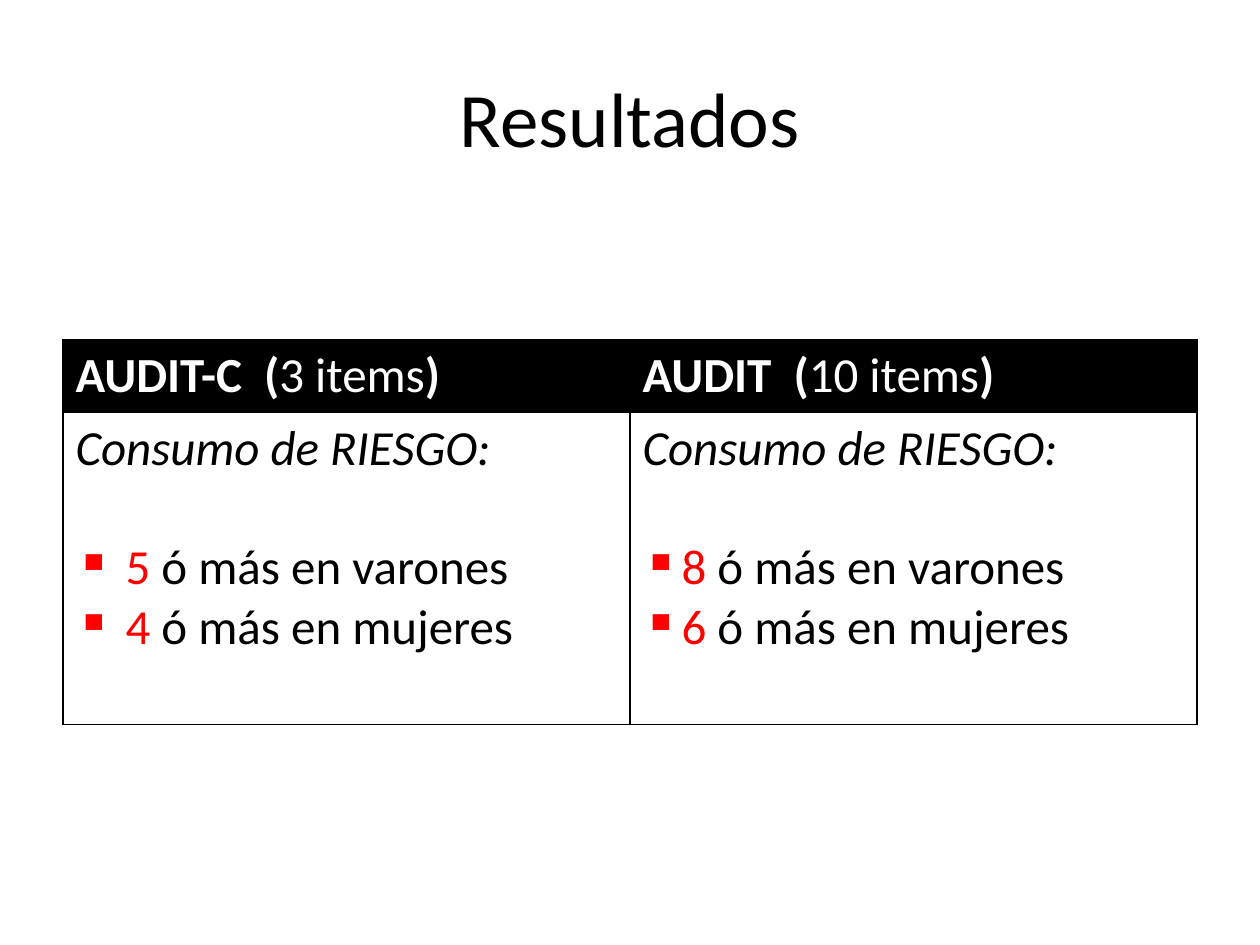
from dataclasses import dataclass

from lxml import etree
from pptx import Presentation
from pptx.dml.color import RGBColor
from pptx.enum.text import MSO_ANCHOR, PP_ALIGN
from pptx.oxml.ns import qn
from pptx.util import Emu, Pt

PX = 914400 / 126
BLACK = RGBColor(0x00, 0x00, 0x00)
WHITE = RGBColor(0xFF, 0xFF, 0xFF)
RED = RGBColor(0xFF, 0x00, 0x00)
FONT = "Calibri"
CENTER = PP_ALIGN.CENTER
MIDDLE = MSO_ANCHOR.MIDDLE
TABLE_TEXT = 28
LINE_GAP = 34
BULLET_INDENT = 39
COLUMN_WIDTH = 567
ROW_HEIGHTS = (72, 312)
BORDER_SIDES = ("lnL", "lnR", "lnT", "lnB")


@dataclass(frozen=True)
class Piece:
    text: str
    color: RGBColor = BLACK
    bold: bool = False
    italic: bool = False


@dataclass(frozen=True)
class Questionnaire:
    name: str
    items: str
    men: str
    women: str


QUESTIONNAIRES = (
    Questionnaire("AUDIT-C", "3 items", " 5", " 4"),
    Questionnaire("AUDIT", "10 items", "8", "6"),
)


def px(length: int) -> Emu:
    return Emu(round(length * PX))


def write_pieces(paragraph, pieces: tuple[Piece, ...], size: int = TABLE_TEXT) -> None:
    for piece in pieces:
        run = paragraph.add_run()
        run.text = piece.text
        run.font.name = FONT
        run.font.size = Pt(size)
        run.font.bold = piece.bold
        run.font.italic = piece.italic
        run.font.color.rgb = piece.color


def add_bullet(paragraph) -> None:
    properties = paragraph._p.get_or_add_pPr()
    properties.set("marL", str(px(BULLET_INDENT)))
    properties.set("indent", str(-px(BULLET_INDENT)))
    etree.SubElement(properties, qn("a:buChar"), char="▪")


def style_cell(cell, fill: RGBColor) -> None:
    properties = cell._tc.get_or_add_tcPr()
    for side in BORDER_SIDES:
        border = etree.SubElement(properties, qn(f"a:{side}"), w=str(Pt(1)))
        line_fill = etree.SubElement(border, qn("a:solidFill"))
        etree.SubElement(line_fill, qn("a:srgbClr"), val=str(BLACK))
    cell.fill.solid()
    cell.fill.fore_color.rgb = fill


def write_header(cell, questionnaire: Questionnaire) -> None:
    style_cell(cell, BLACK)
    write_pieces(cell.text_frame.paragraphs[0], (
        Piece(f"{questionnaire.name}  (", WHITE, bold=True),
        Piece(questionnaire.items, WHITE),
        Piece(")", WHITE, bold=True),
    ))


def write_thresholds(cell, questionnaire: Questionnaire) -> None:
    style_cell(cell, WHITE)
    heading = cell.text_frame.paragraphs[0]
    heading.space_after = Pt(LINE_GAP)
    write_pieces(heading, (Piece("Consumo de RIESGO:", italic=True),))
    for score, group in ((questionnaire.men, "varones"), (questionnaire.women, "mujeres")):
        threshold = cell.text_frame.add_paragraph()
        add_bullet(threshold)
        write_pieces(threshold, (Piece(score, RED), Piece(f" ó más en {group}")))


def add_title(slide) -> None:
    title = slide.shapes.title
    title.left, title.top, title.width, title.height = px(63), px(38), px(1134), px(157)
    title.text_frame.vertical_anchor = MIDDLE
    heading = title.text_frame.paragraphs[0]
    heading.alignment = CENTER
    write_pieces(heading, (Piece("Resultados"),), 44)


def add_results(slide) -> None:
    results = slide.shapes.add_table(
        len(ROW_HEIGHTS), len(QUESTIONNAIRES), px(63), px(340),
        px(COLUMN_WIDTH * len(QUESTIONNAIRES)), px(sum(ROW_HEIGHTS)),
    ).table
    for row, height in zip(results.rows, ROW_HEIGHTS):
        row.height = px(height)
    for column, questionnaire in enumerate(QUESTIONNAIRES):
        results.columns[column].width = px(COLUMN_WIDTH)
        write_header(results.cell(0, column), questionnaire)
        write_thresholds(results.cell(1, column), questionnaire)


def main() -> None:
    presentation = Presentation()
    presentation.slide_width = px(1260)
    presentation.slide_height = px(945)
    slide = presentation.slides.add_slide(presentation.slide_layouts[5])
    add_title(slide)
    add_results(slide)
    presentation.save("out.pptx")


if __name__ == "__main__":
    main()
